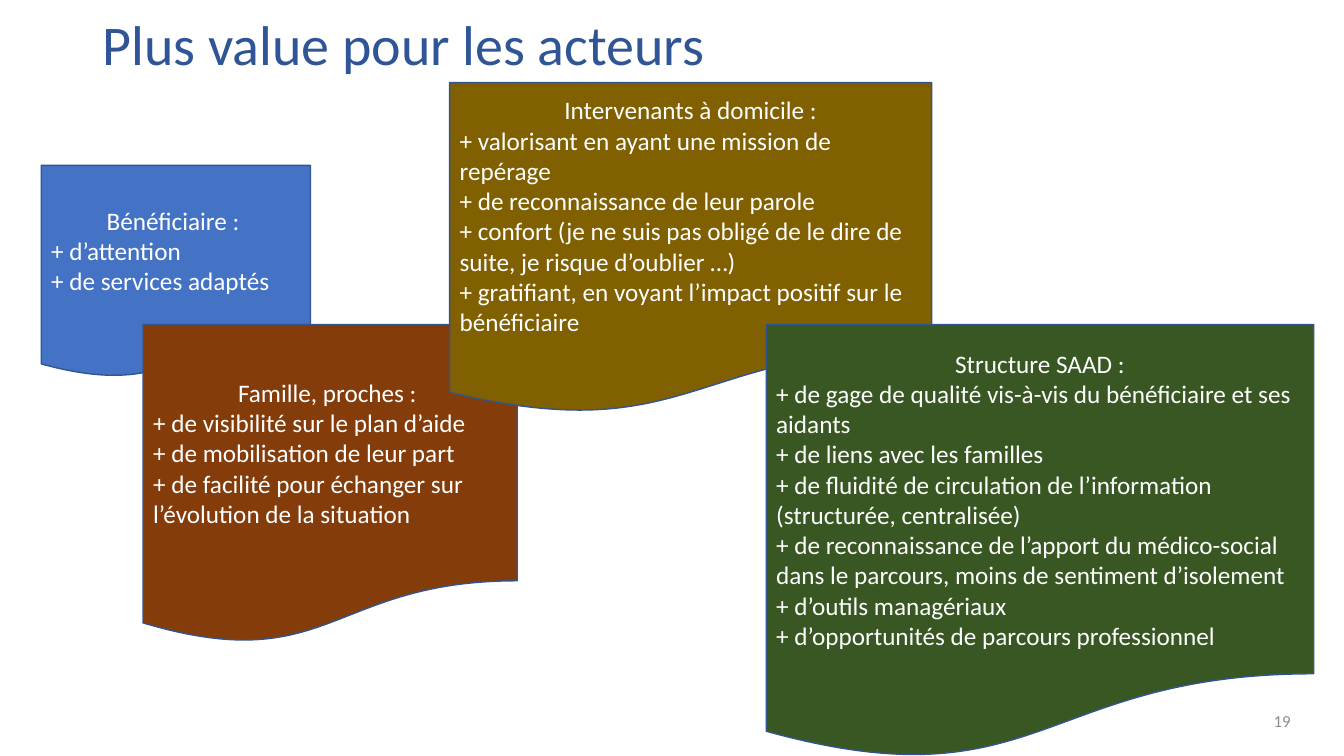
from pptx import Presentation
from pptx.dml.color import RGBColor
from pptx.enum.shapes import MSO_SHAPE
from pptx.enum.text import MSO_ANCHOR, MSO_AUTO_SIZE, PP_ALIGN
from pptx.util import Inches, Pt

FONT = "Calibri"
WHITE = RGBColor(0xFF, 0xFF, 0xFF)
TITLE_BLUE = RGBColor(0x2F, 0x55, 0x97)
OUTLINE_BLUE = RGBColor(0x32, 0x54, 0x91)
NUMBER_GREY = RGBColor(0x8C, 0x8C, 0x8C)
BLUE = RGBColor(0x44, 0x72, 0xC4)
BROWN = RGBColor(0x84, 0x3C, 0x0B)
OCHRE = RGBColor(0x80, 0x60, 0x00)
GREEN = RGBColor(0x38, 0x57, 0x23)

ACTORS = [
    ((0.41, 1.64, 2.67, 2.11), BLUE, "Bénéficiaire : ", [
        "d’attention",
        "de services adaptés",
    ]),
    ((1.42, 3.22, 3.71, 3.17), BROWN, "Famille, proches : ", [
        "de visibilité sur le plan d’aide",
        "de mobilisation de leur part",
        "de facilité pour échanger sur l’évolution de la situation",
    ]),
    ((4.46, 0.82, 4.78, 3.29), OCHRE, "Intervenants à domicile :", [
        "valorisant en ayant une mission de repérage",
        "de reconnaissance de leur parole",
        "confort (je ne suis pas obligé de le dire de suite, je risque d’oublier …)",
        "gratifiant, en voyant l’impact positif sur le bénéficiaire",
    ]),
    ((7.6, 3.22, 5.43, 4.32), GREEN, "Structure SAAD :", [
        "de gage de qualité vis-à-vis du bénéficiaire et ses aidants",
        "de liens avec les familles",
        "de fluidité de circulation de l’information (structurée, centralisée)",
        "de reconnaissance de l’apport du médico-social dans le parcours, "
        "moins de sentiment d’isolement",
        "d’outils managériaux",
        "d’opportunités de parcours professionnel",
    ]),
]


def style_text(para, size, color, align):
    para.alignment = align
    for span in para.runs:
        span.font.name = FONT
        span.font.size = Pt(size)
        span.font.color.rgb = color


def prepare_frame(shape):
    frame = shape.text_frame
    frame.word_wrap = True
    frame.auto_size = MSO_AUTO_SIZE.NONE
    frame.vertical_anchor = MSO_ANCHOR.MIDDLE
    return frame


def add_title(page, box, text):
    title = page.shapes.title
    title.left, title.top, title.width, title.height = map(Inches, box)
    frame = prepare_frame(title)
    frame.text = text
    para = frame.paragraphs[0]
    para.line_spacing = 0.9
    style_text(para, 40, TITLE_BLUE, PP_ALIGN.LEFT)


def add_page_number(page, box, number):
    frame = prepare_frame(page.shapes.add_textbox(*map(Inches, box)))
    frame.text = str(number)
    style_text(frame.paragraphs[0], 12, NUMBER_GREY, PP_ALIGN.RIGHT)


def add_actor(page, box, color, heading, benefits):
    card = page.shapes.add_shape(MSO_SHAPE.FLOWCHART_DOCUMENT, *map(Inches, box))
    card.shadow.inherit = False
    card.fill.solid()
    card.fill.fore_color.rgb = color
    card.line.color.rgb = OUTLINE_BLUE
    card.line.width = Pt(1)
    frame = prepare_frame(card)
    frame.text = "\n".join([heading] + [f"+ {benefit}" for benefit in benefits])
    for index, para in enumerate(frame.paragraphs):
        style_text(para, 18, WHITE, PP_ALIGN.LEFT if index else PP_ALIGN.CENTER)


def main():
    deck = Presentation()
    deck.slide_width = Inches(13.33)
    deck.slide_height = Inches(7.5)
    page = deck.slides.add_slide(deck.slide_layouts[5])
    add_title(page, (0.92, 0.2, 11.44, 0.54), "Plus value pour les acteurs")
    add_page_number(page, (12.42, 6.95, 0.48, 0.4), 19)
    for actor in ACTORS:
        add_actor(page, *actor)
    deck.save("out.pptx")


if __name__ == "__main__":
    main()
